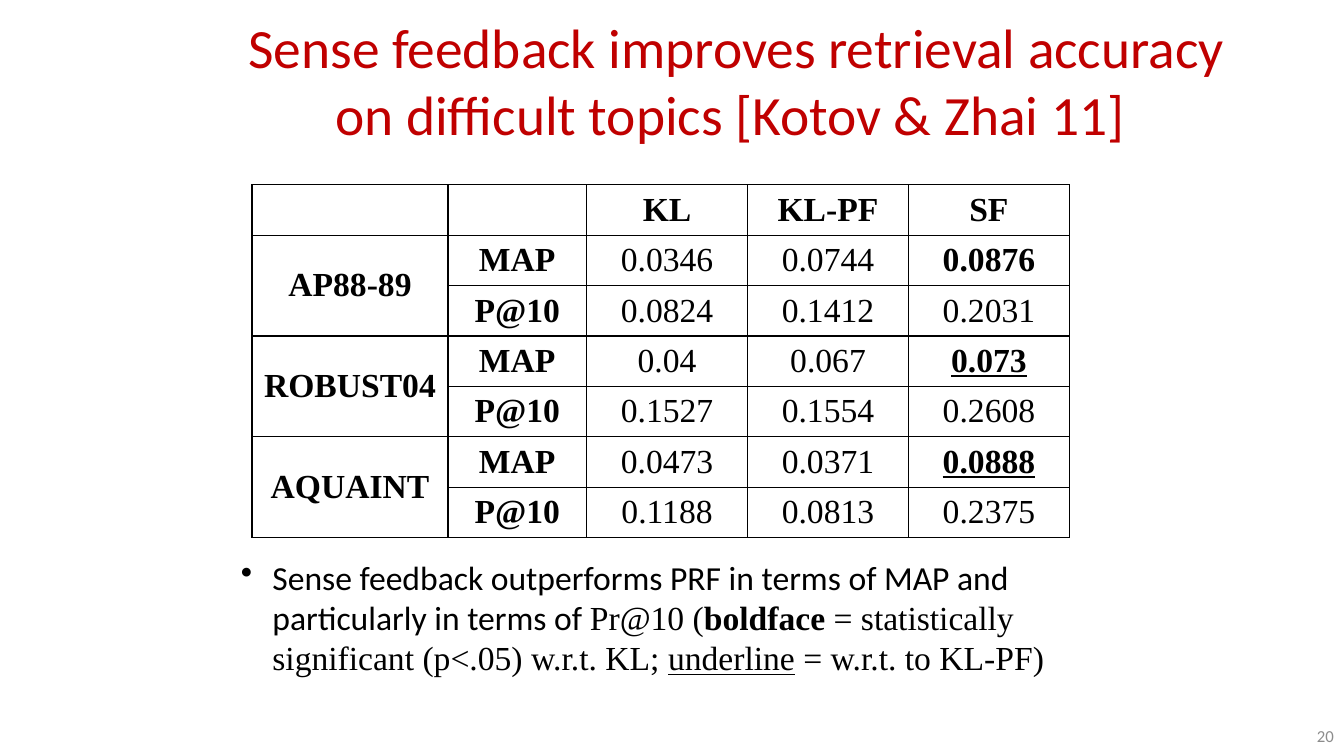
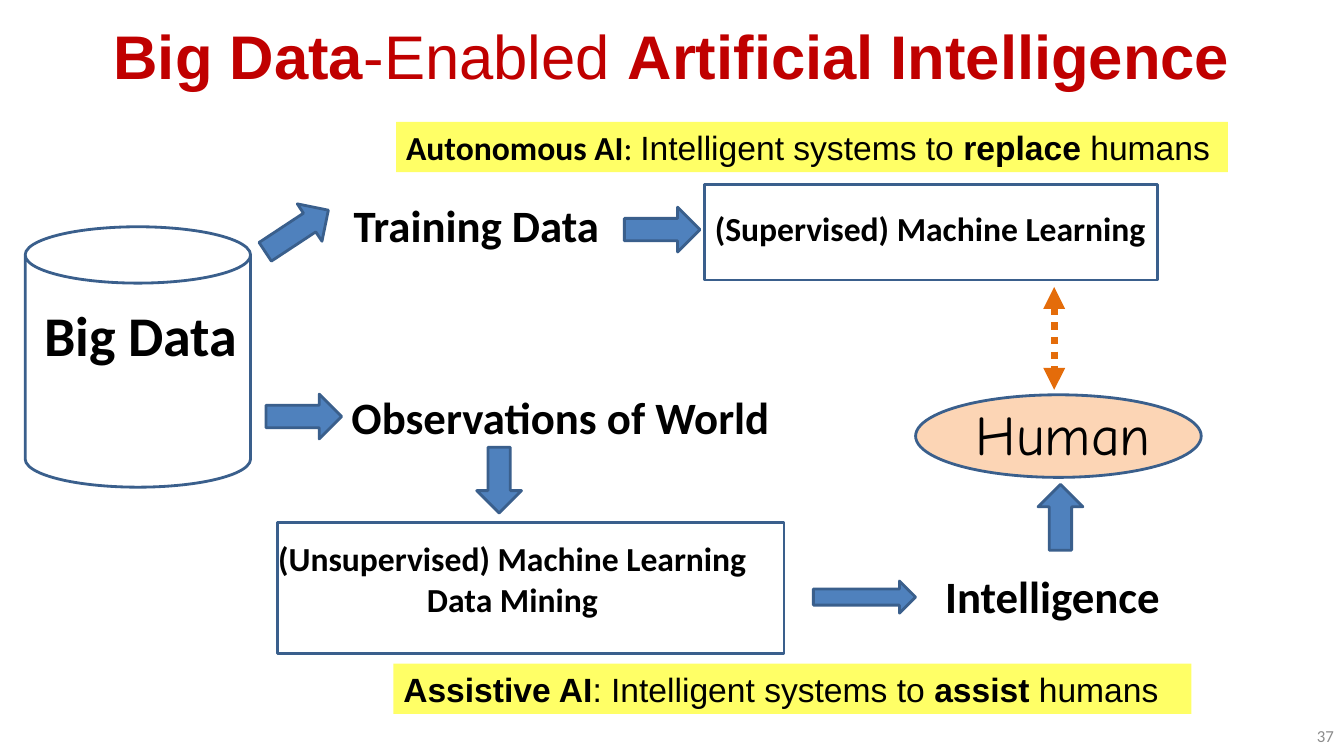
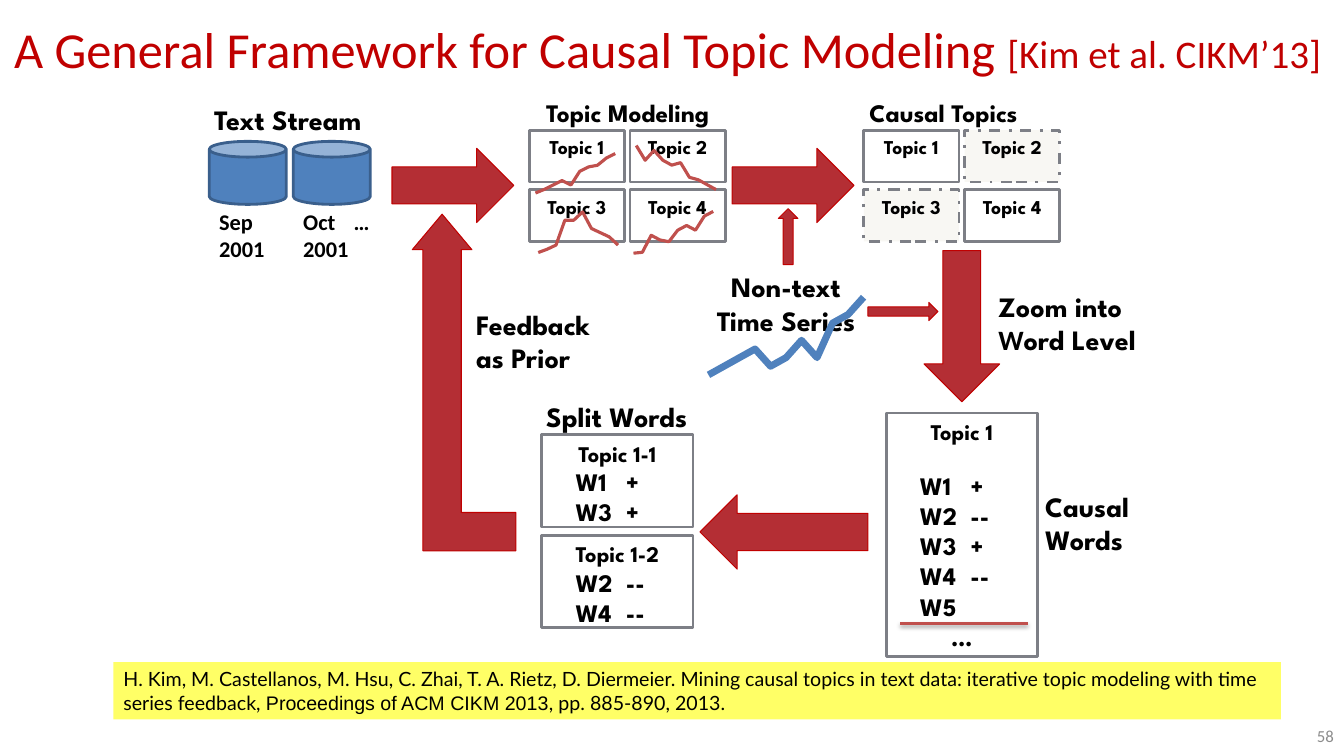
from pptx import Presentation
from pptx.chart import data as chart_data
from pptx.dml import color
from pptx.enum import chart as chart_kinds, dml, shapes, text
from pptx.oxml import ns, parse_xml
from pptx.util import Pt

# Shared look
RED, BLACK, WHITE, GREY = "C00000", "000000", "FFFFFF", "8C8C8C"
BLUE, NAVY, YELLOW, PEACH, ORANGE = "4F81BD", "3A5F8C", "FFFF66", "FCD5B5", "E46C0A"
BRICK, STEEL, IVORY, CORAL = "B42E34", "7D7F86", "F8F7F3", "C0504D"
KINDS, ALIGN, ANCHOR = shapes.MSO_SHAPE, text.PP_ALIGN, text.MSO_ANCHOR
PAGE_WIDTH, PAGE_HEIGHT = 960, 540
NAMESPACES = ns.nsdecls("a")


def paint(hex_code):
    return color.RGBColor.from_string(hex_code)


def style(size, font="Calibri", bold=False, hex_code=BLACK, underline=False):
    return dict(size=size, font=font, bold=bold, color=hex_code, underline=underline)


SERIF = style(24, "Times New Roman")
CAPTION = style(20, "League Spartan", True)


# Text and shape helpers
def format_span(span, look):
    span.font.size = Pt(look["size"])
    span.font.name = look["font"]
    span.font.bold = look["bold"]
    span.font.underline = look["underline"]
    span.font.color.rgb = paint(look["color"])


def write(frame, lines, look, align=ALIGN.LEFT, anchor=ANCHOR.TOP, wrap=True):
    """Each line is a string or a list of (text, style changes) spans."""
    lines = [[(line, {})] if isinstance(line, str) else line for line in lines]
    frame.text = "\n".join(line[0][0] for line in lines)
    frame.word_wrap, frame.vertical_anchor = wrap, anchor
    for para, line in zip(frame.paragraphs, lines):
        para.alignment = align
        for extra, _ in line[1:]:
            para.add_run().text = extra
        for span, (_, changes) in zip(para.runs, line):
            format_span(span, look | changes)


def add_text(page, box, lines, look, align=ALIGN.LEFT, anchor=ANCHOR.TOP, wrap=True):
    frame = page.shapes.add_textbox(*map(Pt, box)).text_frame
    write(frame, lines, look, align, anchor, wrap)
    frame.auto_size = text.MSO_AUTO_SIZE.NONE if wrap else text.MSO_AUTO_SIZE.SHAPE_TO_FIT_TEXT
    return frame


def add_label(page, box, lines, look, align=ALIGN.LEFT):
    return add_text(page, box, lines, look, align, wrap=False)


def add_figure(page, kind, box, fill, line=None, width=2.0, rotation=0.0):
    figure = page.shapes.add_shape(kind, *map(Pt, box))
    figure.shadow.inherit = False
    figure.rotation = rotation
    figure.fill.solid()
    figure.fill.fore_color.rgb = paint(fill)
    if line:
        figure.line.color.rgb = paint(line)
        figure.line.width = Pt(width)
    else:
        figure.line.fill.background()
    return figure


def add_blue_arrow(page, box, rotation=0.0):
    add_figure(page, KINDS.RIGHT_ARROW, box, BLUE, NAVY, rotation=rotation)


def add_red_arrow(page, box, rotation=0.0, kind=KINDS.RIGHT_ARROW):
    return add_figure(page, kind, box, BRICK, RED, 0.75, rotation)


def add_banner(page, box, spans, look):
    banner = add_figure(page, KINDS.RECTANGLE, box, YELLOW)
    write(banner.text_frame, [spans], look)


def add_line(page, start, end, hex_code, width, effect=""):
    line = page.shapes.add_connector(shapes.MSO_CONNECTOR.STRAIGHT, *map(Pt, start + end))
    line.line.color.rgb = paint(hex_code)
    line.line.width = Pt(width)
    line.element.spPr.append(parse_xml(f"<a:effectLst {NAMESPACES}>{effect}</a:effectLst>"))
    return line


def set_indent(para, left, first=0, extra=None):
    properties = para._p.get_or_add_pPr()
    properties.set("marL", str(Pt(left)))
    properties.set("indent", str(Pt(first)))
    if extra:
        properties.append(parse_xml(extra))


def tab_stop(position):
    return f'<a:tabLst {NAMESPACES}><a:tab pos="{Pt(position)}" algn="l"/></a:tabLst>'


def start_page(deck, number, title_box, title, title_look):
    page = deck.slides.add_slide(deck.slide_layouts[6])
    add_text(page, title_box, [title], title_look, ALIGN.CENTER, ANCHOR.MIDDLE)
    add_text(page, (PAGE_WIDTH - 224, PAGE_HEIGHT - 29, 224, 29), [str(number)],
             style(12, hex_code=GREY), ALIGN.RIGHT, ANCHOR.MIDDLE)
    return page


# Slide 1: retrieval results
RESULTS = [
    ["", "", "KL", "KL-PF", "SF"],
    ["AP88-89", "MAP", "0.0346", "0.0744", "0.0876"],
    ["", "P@10", "0.0824", "0.1412", "0.2031"],
    ["ROBUST04", "MAP", "0.04", "0.067", "0.073"],
    ["", "P@10", "0.1527", "0.1554", "0.2608"],
    ["AQUAINT", "MAP", "0.0473", "0.0371", "0.0888"],
    ["", "P@10", "0.1188", "0.0813", "0.2375"],
]
BOLD_VALUES = {"0.0876", "0.073", "0.0888"}
UNDERLINED_VALUES = {"0.073", "0.0888"}


def add_borders(cell):
    properties = cell._tc.get_or_add_tcPr()
    for edge in ("lnL", "lnR", "lnT", "lnB"):
        properties.append(parse_xml(
            f'<a:{edge} {NAMESPACES} w="{Pt(1)}"><a:solidFill><a:srgbClr val="{BLACK}"/>'
            f"</a:solidFill></a:{edge}>"))


def results_table(page, left, top):
    widths, row_height = [140, 99, 115, 115, 115], 36
    box = (left, top, sum(widths), row_height * len(RESULTS))
    table = page.shapes.add_table(len(RESULTS), len(widths), *map(Pt, box)).table
    table.first_row = table.horz_banding = False
    for column, width in zip(table.columns, widths):
        column.width = Pt(width)
    for row, values in enumerate(RESULTS):
        for column, value in enumerate(values):
            cell = table.cell(row, column)
            look = SERIF | dict(bold=row == 0 or column < 2 or value in BOLD_VALUES,
                                underline=value in UNDERLINED_VALUES)
            write(cell.text_frame, [value], look, ALIGN.CENTER)
            cell.vertical_anchor = ANCHOR.MIDDLE
            add_borders(cell)
            cell.fill.background()
    for row in range(1, len(RESULTS), 2):
        table.cell(row, 0).merge(table.cell(row + 1, 0))


def results_note(page, box):
    serif = {"font": "Times New Roman"}
    frame = add_text(page, box, [[
        ("Sense feedback outperforms PRF in terms of MAP and particularly in terms of ", {}),
        ("Pr@10 (", serif), ("boldface", serif | {"bold": True}),
        (" = statistically significant (p<.05) w.r.t. KL; ", serif),
        ("underline", serif | {"underline": True}), (" = w.r.t. to KL-PF)", serif),
    ]], style(24))
    set_indent(frame.paragraphs[0], 22.5, -22.5, f'<a:buChar {NAMESPACES} char="•"/>')


def results_page(deck):
    title = "Sense feedback improves retrieval accuracy on difficult topics [Kotov & Zhai 11] "
    page = start_page(deck, 20, (158.5, 12, 735, 90), title, style(39.6, hex_code=RED))
    results_table(page, 180, 132)
    results_note(page, (165, 394, 642, 94))


# Slide 2: data-driven intelligence
STEP, METHOD = style(32, bold=True), style(24, bold=True)
BOLD, PLAIN = {"bold": True}, {"bold": False}


def data_store(page, left, top):
    add_figure(page, KINDS.CAN, (left, top, 161, 186), WHITE, NAVY)
    add_label(page, (left + 6.5, top + 49, 154, 55), ["Big Data"], style(40, bold=True))


def autonomous_branch(page, left, top):
    add_banner(page, (left + 98, top, 594, 36), [
        ("Autonomous AI", BOLD), (": ", {}), ("Intelligent systems to ", {"font": "Arial"}),
        ("replace", BOLD | {"font": "Arial"}), (" humans", {"font": "Arial"})], style(24))
    add_blue_arrow(page, (left, top + 62, 54, 32), 326.6)
    add_label(page, (left + 60.5, top + 51, 199, 46), ["Training Data"], STEP)
    add_blue_arrow(page, (left + 261, top + 61, 54, 32))
    add_figure(page, KINDS.RECTANGLE, (left + 318, top + 45, 324, 68), WHITE, NAVY)
    add_text(page, (left + 291, top + 58, 377, 36), ["(Supervised) Machine Learning"],
             METHOD, ALIGN.CENTER)


def assistive_branch(page, left, top):
    add_blue_arrow(page, (left, top + 6.5, 54, 32))
    add_label(page, (left + 54, top, 316, 46), ["Observations of World"], STEP)
    add_blue_arrow(page, (left + 143, top + 52, 47, 32), 90)
    add_figure(page, KINDS.RECTANGLE, (left + 8, top + 98, 362, 94), WHITE, NAVY)
    add_label(page, (left, top + 106, 352, 66),
              ["(Unsupervised) Machine Learning", "Data Mining"], METHOD, ALIGN.CENTER)
    add_blue_arrow(page, (left + 391, top + 140, 73, 23))
    add_label(page, (left + 478, top + 128, 169, 46), ["Intelligence"], STEP)
    add_blue_arrow(page, (left + 544, top + 78.5, 47, 32), 270)
    add_banner(page, (left + 91, top + 199, 570, 36), [
        ("Assistive AI", BOLD), (": Intelligent systems to ", {}), ("assist ", BOLD),
        ("humans", {})], style(24, "Arial"))


def human_node(page, left, top):
    add_figure(page, KINDS.OVAL, (left, top, 204, 59), PEACH, NAVY)
    add_label(page, (left + 36, top, 141, 55), ["Human"], style(40, "Comic Neue"))
    link = add_line(page, (left + 99, top - 77), (left + 99, top - 3.5), ORANGE, 5.25)
    link.line.dash_style = dml.MSO_LINE.ROUND_DOT
    for end in ("headEnd", "tailEnd"):
        link.line._get_or_add_ln().append(parse_xml(f'<a:{end} {NAMESPACES} type="triangle"/>'))


def intelligence_page(deck):
    title = [("Big Data", BOLD), ("-Enabled ", PLAIN), ("Artificial Intelligence", BOLD)]
    page = start_page(deck, 37, (0, 0, PAGE_WIDTH, 78), title, style(44, "Arial", hex_code=RED))
    data_store(page, 18, 162)
    autonomous_branch(page, 185, 87)
    assistive_branch(page, 190, 275)
    human_node(page, 654, 282)


# Slide 3: causal topic framework
TREND_PLOTS = [  # shift right, shift down, height, values; one per topic
    (0, 11, 35, [2, 11, 22, 33, 22, 56, 67, 71, 89, 100]),
    (0, 4, 42, [100, 70, 90, 70, 60, 65, 35, 30, 20, 10]),
    (2, 10, 36, [2, 10, 20, 80, 80, 100, 60, 50, 40, 20]),
    (-2, 9.5, 37, [2, 4, 44, 33, 29, 56, 67, 56, 89, 100]),
]
TIME_SERIES = [10, 20, 30, 40, 20, 30, 50, 30, 70, 80, 100]


def add_trend(page, box, values, hex_code, width, size):
    source = chart_data.CategoryChartData()
    source.categories = [str(number + 1) for number in range(len(values))]
    source.add_series("Series 1", values)
    chart = page.shapes.add_chart(chart_kinds.XL_CHART_TYPE.LINE, *map(Pt, box), source).chart
    chart.has_title = chart.has_legend = False
    chart.font.size, chart.font.name = Pt(size), "Calibri"
    chart.font.color.rgb = paint(BLACK)
    chart.plots[0].vary_by_categories = False
    chart.category_axis.visible = chart.value_axis.visible = False
    chart.value_axis.has_major_gridlines = False
    chart.value_axis.minimum_scale, chart.value_axis.maximum_scale = 0, 120
    series = chart.plots[0].series[0]
    series.smooth = False
    series.format.line.color.rgb = paint(hex_code)
    series.format.line.width = Pt(width)
    # Let the plot fill its frame
    area = chart.element.find(".//" + ns.qn("c:plotArea"))
    for layout in area.findall(ns.qn("c:layout")):
        area.remove(layout)
    places = "".join(f'<c:{name} val="{value}"/>' for name, value in (
        ("layoutTarget", "inner"), ("xMode", "edge"), ("yMode", "edge"),
        ("x", 0.02), ("y", 0), ("w", 0.96), ("h", 1)))
    area.insert(0, parse_xml(f'<c:layout {ns.nsdecls("c")}><c:manualLayout>{places}'
                             "</c:manualLayout></c:layout>"))


def text_stream(page, left, top):
    add_text(page, (left, top, 135, 32), ["Text Stream"], CAPTION, ALIGN.CENTER)
    for index, lines in enumerate((["Sep", "2001"], ["Oct\t…", "2001"])):
        x = left + 11.5 + 60 * index
        add_figure(page, KINDS.CAN, (x, top + 31, 55, 45), BLUE, NAVY)
        frame = add_text(page, (x, top + 75, 80, 46), lines, style(16, bold=True))
        set_indent(frame.paragraphs[0], 0, extra=tab_stop(49))


def topic_grid(page, left, top, heading, heading_shift, dashed=(), plots=()):
    add_label(page, (left + heading_shift, top - 27, 138, 29), [heading], CAPTION | {"size": 18})
    corners = [(left + 72 * column, top + 42.5 * row) for row in (0, 1) for column in (0, 1)]
    for number, corner in enumerate(corners, 1):
        fill = IVORY if number in dashed else WHITE
        cell = add_figure(page, KINDS.RECTANGLE, corner + (68, 37), fill, STEEL)
        if number in dashed:
            cell.line.dash_style = dml.MSO_LINE.DASH_DOT
        write(cell.text_frame, [f"Topic {number}"], CAPTION | {"size": 14}, ALIGN.CENTER)
    for (x, y), (right, down, height, values) in zip(corners, plots):
        add_trend(page, (x + right, y + down, 66, height), values, CORAL, 2.25, 10)


def word_box(page, box, heading, words, gap=0):
    frame = add_figure(page, KINDS.RECTANGLE, box, WHITE, STEEL).text_frame
    write(frame, [[(heading, {"size": 16})]] + words, CAPTION | {"size": 18}, ALIGN.CENTER)
    frame.paragraphs[0].space_after = Pt(gap)
    for para in frame.paragraphs[1:]:
        if para.text.startswith("W"):
            para.alignment = ALIGN.LEFT
            set_indent(para, 17, extra=tab_stop(65))


def causal_words(page, left, top):
    word_box(page, (left, top, 108, 174), "Topic 1",
             ["W1\t+", "W2\t--", "W3\t+", "W4\t--", "W5", "…"], 18)
    shadow = (f'<a:outerShdw blurRad="{Pt(3.1)}" dist="{Pt(1.6)}" dir="5400000">'
              f'<a:srgbClr val="{BLACK}"><a:alpha val="38000"/></a:srgbClr></a:outerShdw>')
    add_line(page, (left + 10, top + 150.5), (left + 101, top + 150.5), CORAL, 2, shadow)
    add_label(page, (left + 106.5, top + 51, 81, 55), ["Causal", "Words"], CAPTION)


def split_words(page, left, top):
    add_label(page, (left - 10, top - 29, 127, 32), ["Split Words"], CAPTION, ALIGN.CENTER)
    for index, words in enumerate((["W1\t+", "W3\t+"], ["W2\t--", "W4\t--"])):
        word_box(page, (left, top + 72 * index, 108, 66), f"Topic 1-{index + 1}", words)


def time_series(page, left, top):
    add_label(page, (left, top, 128, 55), ["Non-text", "Time Series"], CAPTION, ALIGN.CENTER)
    add_trend(page, (left + 0.5, top + 11, 127, 74), TIME_SERIES, BLUE, 5, 18)
    add_red_arrow(page, (left + 45.5, top - 27, 40, 14), 270)
    add_red_arrow(page, (left + 122.5, top + 27, 50, 13))


def loop_arrows(page):
    for left in (280, 523):
        add_red_arrow(page, (left, 106, 87, 53))
    add_red_arrow(page, (633, 206, 108, 54), 90)
    add_red_arrow(page, (500, 353.5, 120, 53), 180)
    feedback = add_red_arrow(page, (294.5, 153, 74, 240.5), kind=KINDS.BENT_UP_ARROW)
    for index, share in enumerate((0.37, 0.288, 0.343)):
        feedback.adjustments[index] = share
    feedback.element.spPr.find(ns.qn("a:xfrm")).set("flipH", "1")
    add_label(page, (333, 216, 108, 55), ["Feedback", "as Prior"], CAPTION)
    add_label(page, (706, 203, 125, 55),
              ["Zoom into", [("W", {"font": "Calibri"}), ("ord Level", {})]], CAPTION)


def framework_page(deck):
    title = [("A General Framework for Causal Topic Modeling ", {}),
             ("[Kim et al. CIKM’13] ", {"size": 27.9})]
    page = start_page(deck, 58, (0, 0, PAGE_WIDTH, 69), title, style(36, hex_code=RED))
    time_series(page, 497.5, 189)
    text_stream(page, 138, 70)
    topic_grid(page, 378, 93, "Topic Modeling", 5, plots=TREND_PLOTS)
    topic_grid(page, 617, 93, "Causal Topics", -3, dashed=(2, 3))
    split_words(page, 387, 310.5)
    causal_words(page, 633, 295)
    loop_arrows(page)
    add_banner(page, (81, 473, 834, 41), [
        ("H. Kim, M. Castellanos, M. Hsu, C. Zhai, T. A. Rietz, D. Diermeier. Mining causal "
         "topics in text data: iterative topic modeling with time series feedback, ", {}),
        ("Proceedings of ACM CIKM 2013", {"font": "Arial"}),
        (", pp. 885-890, 2013.", {})], style(14, "Lato"))


def main():
    deck = Presentation()
    deck.slide_width, deck.slide_height = Pt(PAGE_WIDTH), Pt(PAGE_HEIGHT)
    results_page(deck)
    intelligence_page(deck)
    framework_page(deck)
    deck.save("out.pptx")


if __name__ == "__main__":
    main()
